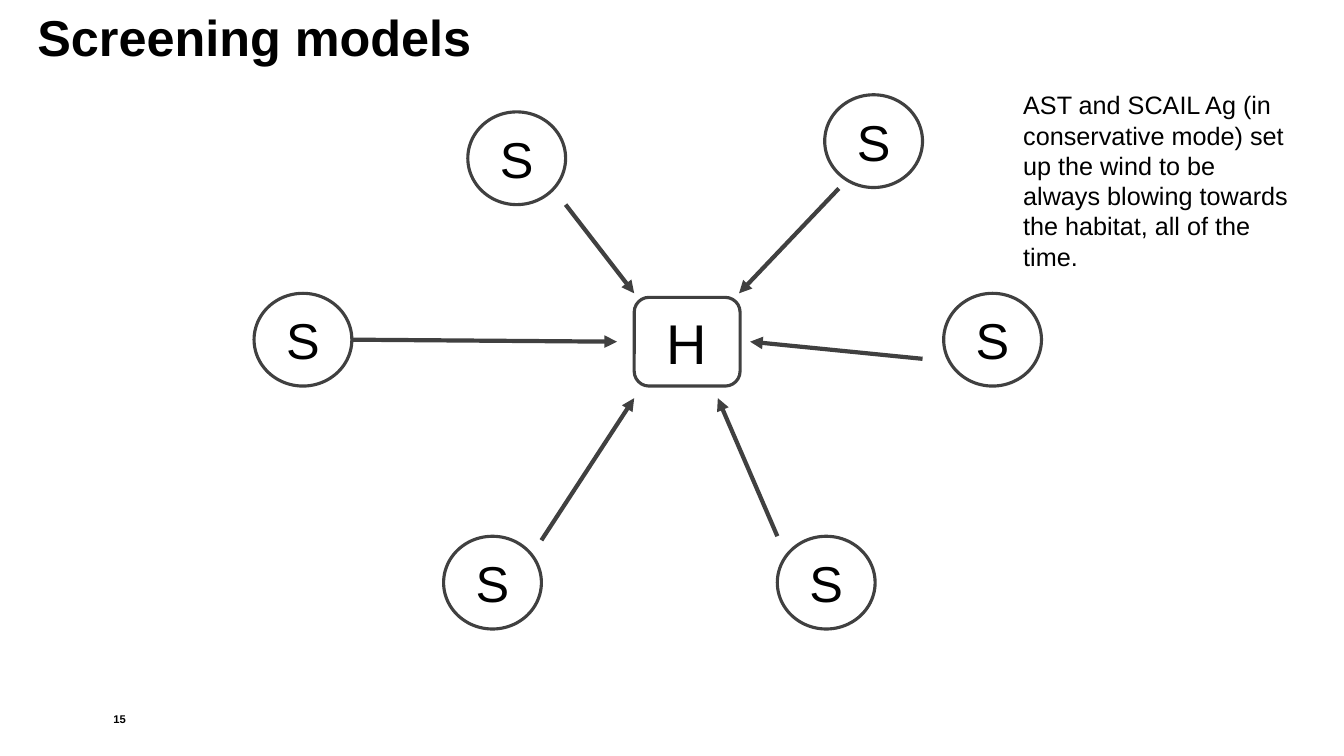
import pptx
import pptx.util
import pptx.dml.color
import pptx.enum.shapes
import pptx.enum.text
import pptx.oxml.ns
import lxml.etree

Inches = pptx.util.Inches
Pt = pptx.util.Pt
SHAPE = pptx.enum.shapes.MSO_SHAPE
ALIGN = pptx.enum.text.PP_ALIGN
ANCHOR = pptx.enum.text.MSO_ANCHOR
GREY = "404040"


def rgb(value):
    return pptx.dml.color.RGBColor.from_string(value)


def set_text(sp, text, size, bold=False, align=ALIGN.LEFT, anchor=ANCHOR.TOP,
             spacing=1.0, inset=None):
    tf = sp.text_frame
    tf.word_wrap = True
    tf.auto_size = pptx.enum.text.MSO_AUTO_SIZE.NONE
    tf.vertical_anchor = anchor
    if inset is not None:
        tf.margin_left = tf.margin_right = Inches(inset)
        tf.margin_top = tf.margin_bottom = Inches(inset)
    p = tf.paragraphs[0]
    p.alignment = align
    p.line_spacing = spacing
    r = p.add_run()
    r.text = text
    r.font.name = "Arial"
    r.font.size = Pt(size)
    r.font.bold = bold
    r.font.color.rgb = rgb("000000")


prs = pptx.Presentation()
prs.slide_width = Inches(13.33)
prs.slide_height = Inches(7.5)
s = prs.slides.add_slide(prs.slide_layouts[5])

# Title
title = s.shapes.title
title.left, title.top = Inches(0.37), Inches(0.13)
title.width, title.height = Inches(11.97), Inches(0.55)
set_text(title, "Screening models", 36, bold=True, spacing=0.9, inset=0)

# Habitat in the centre, sources around it
nodes = [("H", SHAPE.ROUNDED_RECTANGLE, 6.29, 2.95, 1.05, 0.88, 40)]
for x, y in [(2.52, 2.91), (9.36, 2.91), (7.71, 5.32),
             (8.18, 0.94), (4.64, 1.11), (4.4, 5.32)]:
    nodes.append(("S", SHAPE.OVAL, x, y, 0.97, 0.92, 36))

for label, kind, x, y, w, h, size in nodes:
    sp = s.shapes.add_shape(kind, Inches(x), Inches(y), Inches(w), Inches(h))
    sp.shadow.inherit = False
    sp.fill.background()
    sp.line.color.rgb = rgb(GREY)
    sp.line.width = Pt(2.25)
    set_text(sp, label, size, align=ALIGN.CENTER, anchor=ANCHOR.MIDDLE)

# Wind arrows from each source to the habitat
arrows = [
    (3.48, 3.37, 6.12, 3.39),
    (5.61, 2.03, 6.29, 2.91),
    (8.32, 1.87, 7.33, 2.91),
    (9.15, 3.56, 7.44, 3.39),
    (7.71, 5.32, 7.12, 3.95),
    (5.37, 5.36, 6.29, 3.95),
]
for ends in arrows:
    wind = s.shapes.add_connector(pptx.enum.shapes.MSO_CONNECTOR.STRAIGHT,
                                  *[Inches(v) for v in ends])
    wind.line.color.rgb = rgb(GREY)
    wind.line.width = Pt(3)
    qn = pptx.oxml.ns.qn
    lxml.etree.SubElement(wind.line._get_or_add_ln(), qn("a:tailEnd"), type="triangle")
    lxml.etree.SubElement(wind._element.spPr, qn("a:effectLst"))

# Explanation
note = s.shapes.add_textbox(Inches(10.05), Inches(0.84), Inches(2.84), Inches(1.92))
set_text(note, "AST and SCAIL Ag (in conservative mode) set up the wind to be "
               "always blowing towards the habitat, all of the time.", 18)

# Slide number
number = s.shapes.add_textbox(Inches(0.68), Inches(6.78), Inches(0.57), Inches(0.42))
set_text(number, "15", 8, bold=True, align=ALIGN.RIGHT, anchor=ANCHOR.BOTTOM,
         spacing=0.95, inset=0)

prs.save("out.pptx")
